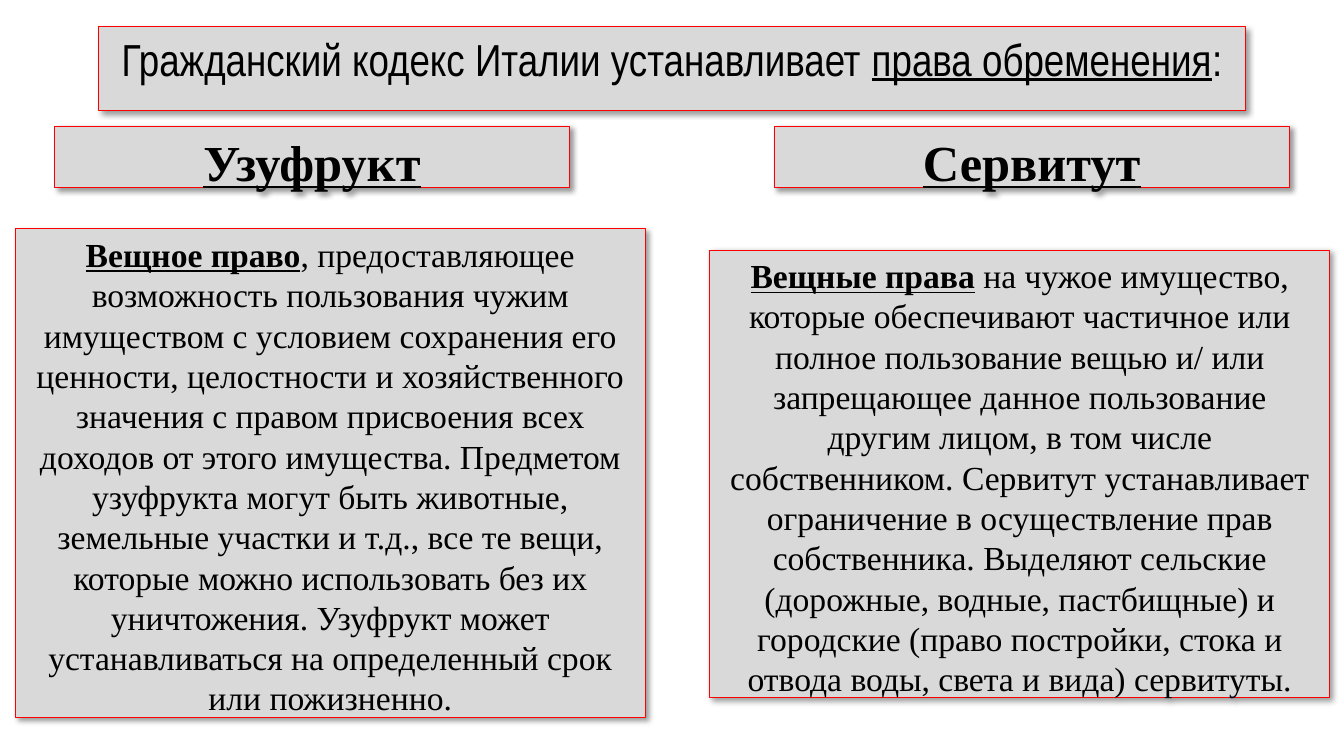
from lxml.etree import SubElement
from pptx import Presentation
from pptx.dml.color import RGBColor
from pptx.enum.text import MSO_ANCHOR, MSO_AUTO_SIZE, PP_ALIGN
from pptx.oxml.ns import qn
from pptx.util import Inches, Pt

HUES = {"fill": "D9D9D9", "edge": "FF0000", "text": "000000", "shade": "000000"}
SERIF = "Times New Roman"
NARROW = "Arial Narrow"

# Each column: heading, its left side, body box, opening words, body text
COLUMNS = [
    ("Узуфрукт", 4.05, (1.13, 30.27, 46.88, 66), "Вещное право",
     ", предоставляющее возможность пользования чужим имуществом с условием "
     "сохранения его ценности, целостности и хозяйственного значения с правом "
     "присвоения всех доходов от этого имущества. Предметом узуфрукта могут быть "
     "животные, земельные участки и т.д., все те вещи, которые можно использовать "
     "без их уничтожения. Узуфрукт может устанавливаться на определенный срок или "
     "пожизненно."),
    ("Сервитут", 57.6, (52.81, 33.07, 46.13, 60.53), "Вещные права",
     " на чужое имущество, которые обеспечивают частичное или полное пользование "
     "вещью и/ или запрещающее данное пользование другим лицом, в том числе "
     "собственником. Сервитут устанавливает ограничение в осуществление прав "
     "собственника. Выделяют сельские (дорожные, водные, пастбищные) и городские "
     "(право постройки, стока и отвода воды, света и вида) сервитуты."),
]


class Board:
    def __init__(self, deck, slide):
        self.wide, self.high = deck.slide_width, deck.slide_height
        self.slots = {s.placeholder_format.idx: s for s in slide.placeholders}

    def shade(self, shape):
        shape.shadow.inherit = False
        effects = shape._element.spPr.find(qn("a:effectLst"))
        outer = SubElement(effects, qn("a:outerShdw"), blurRad=str(Pt(4)),
                           dist=str(Pt(3)), dir="2700000", algn="tl", rotWithShape="0")
        hue = SubElement(outer, qn("a:srgbClr"), val=HUES["shade"])
        SubElement(hue, qn("a:alpha"), val="40000")

    def panel(self, slot, box, size, font, runs):
        """Style a placeholder; box is in percent of the slide, runs are (text, bold, underline)."""
        shape = self.slots[slot]
        left, top, width, height = box
        shape.left, shape.width = (int(self.wide * n / 100) for n in (left, width))
        shape.top, shape.height = (int(self.high * n / 100) for n in (top, height))
        shape.fill.solid()
        shape.fill.fore_color.rgb = RGBColor.from_string(HUES["fill"])
        shape.line.color.rgb = RGBColor.from_string(HUES["edge"])
        shape.line.width = Pt(0.75)
        self.shade(shape)

        frame = shape.text_frame
        frame.word_wrap = True
        frame.auto_size = MSO_AUTO_SIZE.SHAPE_TO_FIT_TEXT
        frame.vertical_anchor = MSO_ANCHOR.TOP
        para = frame.paragraphs[0]
        props = para._p.get_or_add_pPr()
        props.set("marL", "0")
        props.set("indent", "0")
        SubElement(props, qn("a:buNone"))
        para.alignment = PP_ALIGN.CENTER
        para.space_before = Pt(0)
        for text, bold, under in runs:
            run = para.add_run()
            run.text = text
            run.font.name, run.font.size = font, Pt(size)
            run.font.bold, run.font.underline = bold, under
            run.font.color.rgb = RGBColor.from_string(HUES["text"])


def main():
    deck = Presentation()
    deck.slide_width, deck.slide_height = Inches(13.33), Inches(7.5)
    layout = deck.slide_layouts.get_by_name("Comparison")
    board = Board(deck, deck.slides.add_slide(layout))

    board.panel(0, (7.35, 3.47, 85.3, 8.53), 32, NARROW, [
        ("Гражданский кодекс Италии устанавливает ", False, False),
        ("права обременения", False, True),
        (":", False, False)])
    for col, (head, left, box, lead, body) in enumerate(COLUMNS):
        slot = 1 + 2 * col
        board.panel(slot, (left, 16.67, 38.33, 9.47), 36, SERIF, [(head, True, True)])
        board.panel(slot + 1, box, 24, SERIF, [(lead, True, True), (body, False, False)])

    deck.save("out.pptx")


if __name__ == "__main__":
    main()
